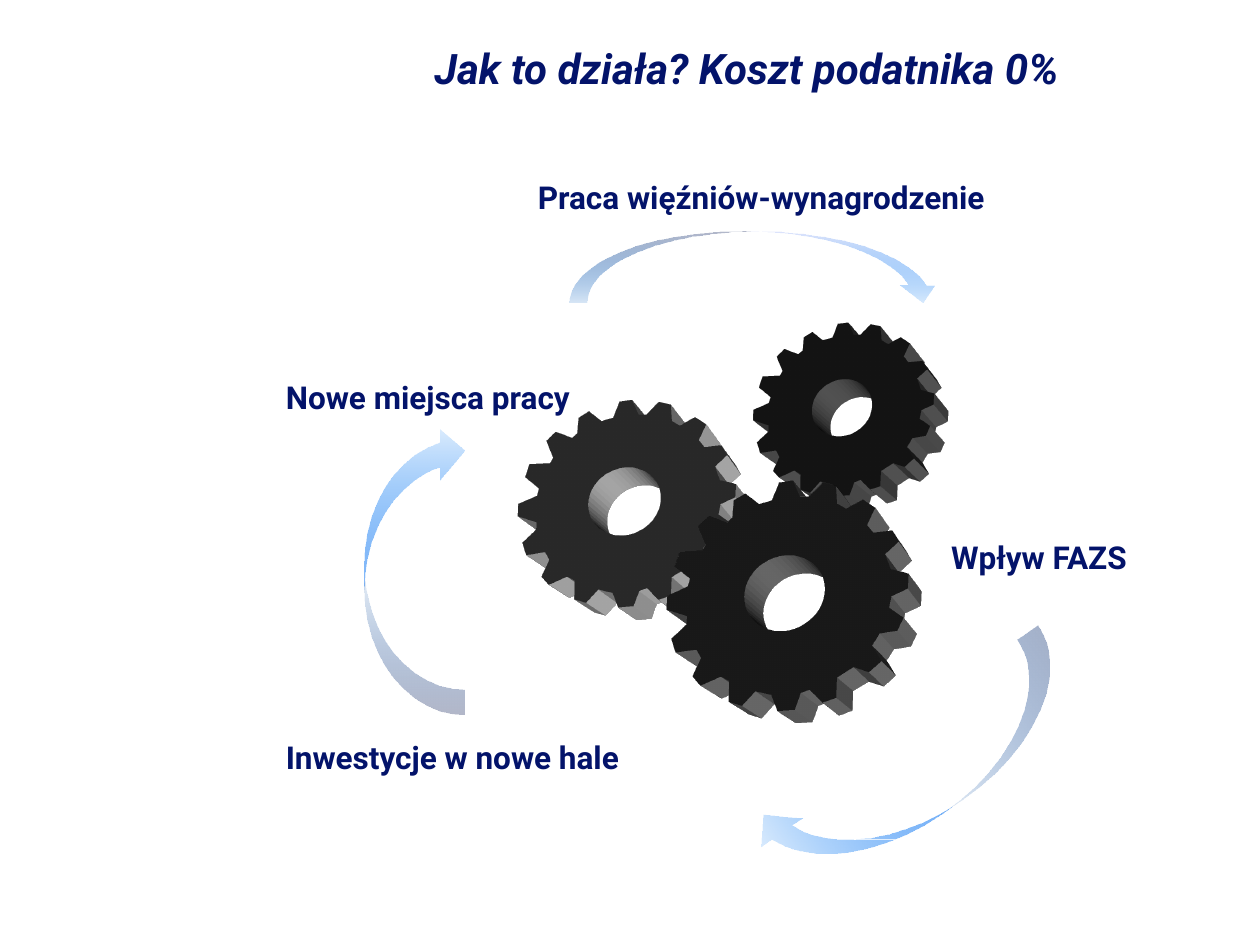
from math import cos, pi, sin

from lxml.etree import SubElement
from pptx import Presentation
from pptx.dml.color import RGBColor
from pptx.enum.shapes import MSO_SHAPE as Preset
from pptx.enum.text import MSO_ANCHOR as Anchor, PP_ALIGN as Align
from pptx.oxml import parse_xml
from pptx.oxml.ns import qn
from pptx.util import Inches, Pt

COLORS = {
    "navy": "03136A",
    "pale": "DFE5FC",
    "blue": "097BF5",
    "dark gear": "5F5F5F",
    "light gear": "C0C0C0",
    "middle gear": "777777",
}
FONT = "Roboto"
UNITS = 100
TEETH = [
    (90, 16), (96, 1), (108, 1), (114, 16), (121, 17), (133, 6), (144, 10), (145, 26),
    (152, 31), (166, 25), (176, 33), (169, 47), (174, 54), (189, 54), (194, 64), (183, 73),
    (187, 86), (201, 91), (200, 103), (187, 108), (185, 117), (196, 126), (191, 136), (177, 137),
    (171, 146), (178, 159), (168, 167), (156, 162), (143, 169), (142, 185), (131, 188), (121, 177),
    (114, 179), (109, 192), (95, 192), (90, 179), (77, 175), (66, 186), (55, 182), (55, 165),
    (48, 161), (31, 167), (24, 159), (31, 144), (27, 137), (9, 138), (5, 126), (18, 115),
    (18, 108), (0, 101), (0, 89), (18, 83), (20, 76), (6, 64), (10, 52), (30, 53),
    (33, 48), (26, 31), (35, 23), (51, 31), (56, 27), (57, 12), (67, 7), (79, 18),
]
HOLE = [
    (100.5 + 33.5 * sin(step * pi / 24), 96.5 + 31.5 * cos(step * pi / 24))
    for step in range(48)
]
DRAWING_NS = 'xmlns:a="http://schemas.openxmlformats.org/drawingml/2006/main"'


def rgb(name):
    """Return the named colour."""
    return RGBColor.from_string(COLORS[name])


def add_label(slide, wording, left, middle, width, size=18, align=Align.LEFT, italic=False):
    """Add one bold line of text centred on the given height."""
    height = 0.5
    box = slide.shapes.add_textbox(
        Inches(left), Inches(middle - height / 2), Inches(width), Inches(height))
    frame = box.text_frame
    frame.word_wrap = True
    frame.vertical_anchor = Anchor.MIDDLE
    frame.text = wording
    line = frame.paragraphs[0]
    line.alignment = align
    font = line.runs[0].font
    font.name, font.size, font.bold, font.italic = FONT, Pt(size), True, italic
    font.color.rgb = rgb("navy")


def add_depth(gear, color):
    """Extrude a gear and turn it slightly in perspective."""
    properties = gear._element.spPr
    properties.append(parse_xml(
        f'<a:scene3d {DRAWING_NS}><a:camera prst="legacyPerspectiveFront">'
        '<a:rot lat="20519999" lon="1080000" rev="0"/></a:camera>'
        '<a:lightRig rig="legacyHarsh2" dir="b"/></a:scene3d>'))
    properties.append(parse_xml(
        f'<a:sp3d {DRAWING_NS} extrusionH="430200" prstMaterial="legacyMatte">'
        '<a:bevelT w="13500" h="13500" prst="angle"/>'
        '<a:bevelB w="13500" h="13500" prst="angle"/>'
        f'<a:extrusionClr><a:srgbClr val="{COLORS[color]}"/></a:extrusionClr></a:sp3d>'))


def add_gear(slide, left, top, size, color):
    """Add a toothed wheel with a round hole, scaled by size."""
    teeth, hole = (
        [(round(x * UNITS), round(y * UNITS)) for x, y in outline] for outline in (TEETH, HOLE))
    builder = slide.shapes.build_freeform(*teeth[0], scale=Inches(0.01) / UNITS * size)
    builder.add_line_segments(teeth[1:], close=True)
    builder.move_to(*hole[0])
    builder.add_line_segments(hole[1:], close=True)
    gear = builder.convert_to_shape(Inches(left), Inches(top))
    gear.fill.solid()
    gear.fill.fore_color.rgb = rgb(color)
    gear.line.fill.background()
    gear.shadow.inherit = False
    add_depth(gear, color)


def add_arrow(slide, preset, left, top, width, height, rotation=0, flipped=False):
    """Add a curved arrow that fades from pale to transparent blue."""
    arrow = slide.shapes.add_shape(
        preset, Inches(left), Inches(top), Inches(width), Inches(height))
    arrow.rotation = rotation
    if flipped:
        arrow._element.spPr.xfrm.set("flipV", "1")
    arrow.fill.gradient()
    arrow.fill.gradient_angle = 270
    for stop, position, color in zip(arrow.fill.gradient_stops, (0, 1), ("pale", "blue")):
        stop.position = position
        stop.color.rgb = rgb(color)
    for tint in arrow._element.spPr.iter(qn("a:srgbClr")):
        if tint.get("val") == COLORS["blue"]:
            SubElement(tint, qn("a:alpha")).set("val", "15000")
    arrow.line.fill.background()
    arrow.shadow.inherit = False


def main():
    """Build the slide and save it."""
    deck = Presentation()
    deck.slide_width, deck.slide_height = Inches(10), Inches(7.5)
    slide = deck.slides.add_slide(deck.slide_layouts[6])

    add_label(slide, "Jak to działa? Koszt podatnika 0%", 1.89, 0.54, 8.07,
              size=24, align=Align.CENTER, italic=True)
    for wording, left, middle, width in (
        ("Praca więźniów-wynagrodzenie", 4.17, 1.56, 4.2),
        ("Nowe miejsca pracy", 2.17, 3.15, 3),
        ("Wpływ FAZS", 7.45, 4.42, 2),
        ("Inwestycje w nowe hale", 2.17, 6.01, 3.5),
    ):
        add_label(slide, wording, left, middle, width)

    add_gear(slide, 5.93, 2.51, 0.75, "dark gear")
    add_gear(slide, 4.05, 3.11, 0.9, "light gear")
    add_gear(slide, 5.22, 3.74, 1, "middle gear")

    add_arrow(slide, Preset.CURVED_DOWN_ARROW, 4.52, 1.84, 2.94, 0.56)
    add_arrow(slide, Preset.CURVED_LEFT_ARROW, 6.89, 4.68, 0.8, 2.84, rotation=55.4)
    add_arrow(slide, Preset.CURVED_RIGHT_ARROW, 2.89, 3.38, 0.8, 2.29, flipped=True)

    deck.save("out.pptx")


if __name__ == "__main__":
    main()
